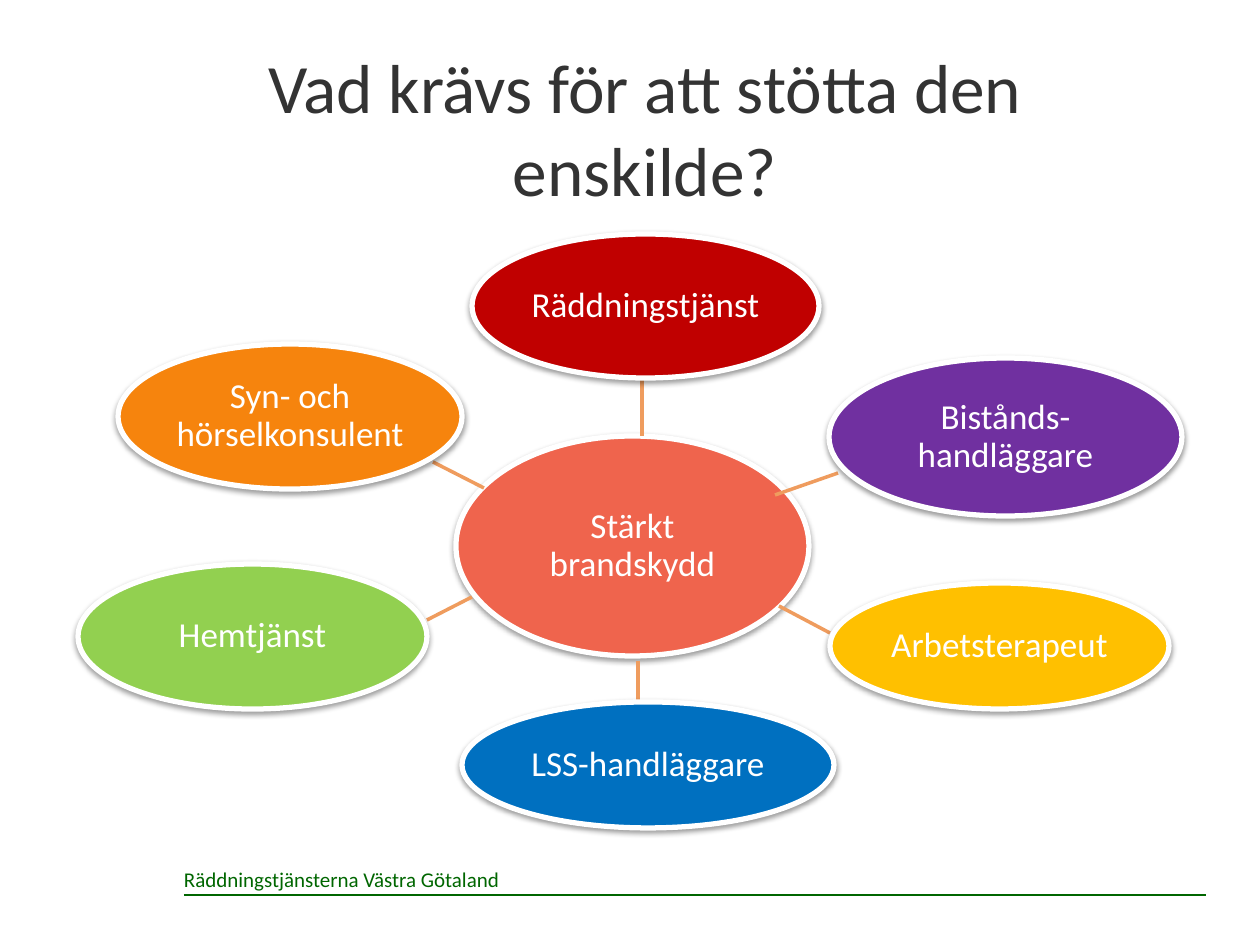
from lxml import etree
from pptx import Presentation
from pptx import util as u
from pptx.dml.color import RGBColor
from pptx.enum import shapes, text
from pptx.oxml import ns

PX = 914400 / 126
FONT = "Calibri"
WHITE, SPOKE, GREEN = "FFFFFF", "EF9C5E", "006600"

# label, fill, box, spoke from the core to the oval
CORE = ("Stärkt brandskydd", "EF644D", (456, 436, 353, 220))
PARTNERS = [
    ("Räddningstjänst", "C00000", (472, 234, 347, 144), (642, 436, 642, 374)),
    ("Bistånds-handläggare", "7030A0", (829, 358, 353, 158), (775, 495, 838, 473)),
    ("Arbetsterapeut", "FFC000", (830, 583, 339, 126), (779, 606, 830, 633)),
    ("LSS-handläggare", "0070C0", (462, 702, 372, 126), (638, 661, 638, 706)),
    ("Hemtjänst", "92D050", (78, 564, 349, 145), (472, 597, 427, 620)),
    ("Syn- och hörselkonsulent", "F6840D", (118, 344, 344, 145), (484, 488, 433, 462)),
]


def px(*lengths):
    return [u.Emu(round(length * PX)) for length in lengths]


def paint(color_format, color):
    color_format.rgb = RGBColor.from_string(color)


def write(frame, wording, size, color, align, anchor, insets):
    frame.word_wrap = True
    frame.auto_size = text.MSO_AUTO_SIZE.NONE
    frame.vertical_anchor = anchor
    (frame.margin_left, frame.margin_top,
     frame.margin_right, frame.margin_bottom) = px(*insets)
    frame.text = wording
    paragraph = frame.paragraphs[0]
    paragraph.alignment = align
    paragraph.font.name = FONT
    paragraph.font.size = u.Pt(size)
    paint(paragraph.font.color, color)
    return paragraph


def add_effects(shape):
    return etree.SubElement(shape._element.spPr, ns.qn("a:effectLst"))


def add_line(slide, ends, color, width):
    line = slide.shapes.add_connector(shapes.MSO_CONNECTOR.STRAIGHT, *px(*ends))
    paint(line.line.color, color)
    line.line.width = u.Pt(width)
    add_effects(line)


def add_soft_shadow(shape):
    shadow = etree.SubElement(
        add_effects(shape), ns.qn("a:outerShdw"), blurRad=str(u.Pt(3.1)),
        dist=str(u.Pt(1.6)), dir="5400000", rotWithShape="0")
    black = etree.SubElement(shadow, ns.qn("a:srgbClr"), val="000000")
    etree.SubElement(black, ns.qn("a:alpha"), val="38000")


def add_oval(slide, label, fill, box):
    oval = slide.shapes.add_shape(shapes.MSO_SHAPE.OVAL, *px(*box))
    oval.fill.solid()
    paint(oval.fill.fore_color, fill)
    paint(oval.line.color, WHITE)
    oval.line.width = u.Pt(3)
    add_soft_shadow(oval)
    paragraph = write(oval.text_frame, label, 20, WHITE, text.PP_ALIGN.CENTER,
                      text.MSO_ANCHOR.MIDDLE, (6, 0, 6, 0))
    paragraph.line_spacing = 0.9


def add_title(slide, box):
    title = slide.shapes.add_textbox(*px(*box))
    write(title.text_frame, "Vad krävs för att stötta den enskilde?", 39.6, "333333",
          text.PP_ALIGN.CENTER, text.MSO_ANCHOR.TOP, (13, 9, 13, 6))


def add_footer(slide, box):
    left, top, width, height = box
    add_line(slide, (left + 13, top + 34, left + width, top + 34), GREEN, 1.5)
    sender = slide.shapes.add_textbox(*px(left, top, 387, height))
    write(sender.text_frame, "Räddningstjänsterna Västra Götaland", 12, GREEN,
          text.PP_ALIGN.LEFT, text.MSO_ANCHOR.TOP, (13, 6, 13, 6))


def add_network(slide):
    """Core oval with one spoke to each partner around it."""
    add_oval(slide, *CORE)
    for label, fill, box, spoke in PARTNERS:
        add_line(slide, spoke, SPOKE, 2)
        add_oval(slide, label, fill, box)


def main():
    deck = Presentation()
    deck.slide_width, deck.slide_height = px(1260, 945)
    slide = deck.slides.add_slide(deck.slide_layouts[6])
    add_footer(slide, (171, 861, 1035, 38))
    add_title(slide, (160, 35, 970, 158))
    add_network(slide)
    deck.save("out.pptx")


if __name__ == "__main__":
    main()
